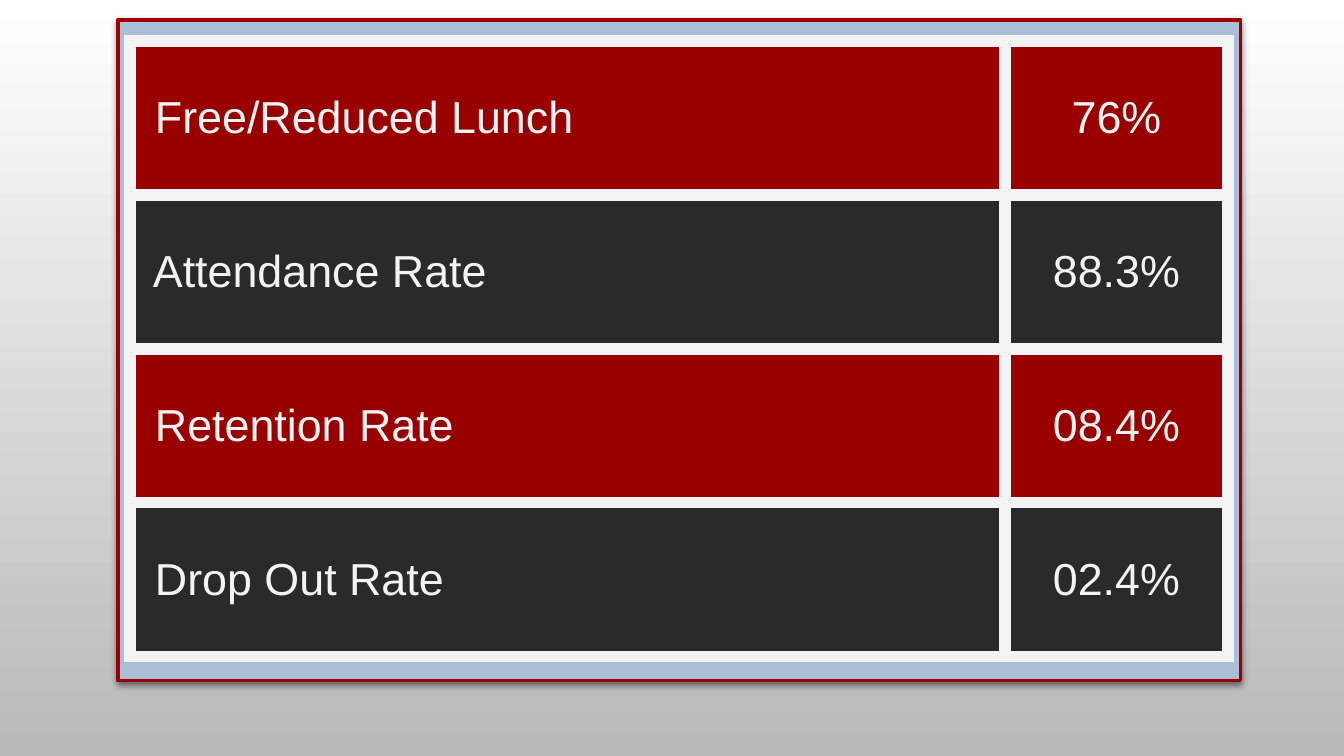
from dataclasses import dataclass

from lxml.etree import SubElement
from pptx import Presentation
from pptx.dml.color import RGBColor
from pptx.enum.shapes import MSO_SHAPE
from pptx.enum.text import MSO_ANCHOR, PP_ALIGN
from pptx.oxml.ns import qn
from pptx.slide import Slide
from pptx.table import Table, _Cell
from pptx.util import Emu, Pt

RED = RGBColor(0x99, 0x00, 0x00)
DARK = RGBColor(0x2A, 0x2A, 0x2A)
LIGHT = RGBColor(0xF3, 0xF3, 0xF3)
BLUE = RGBColor(0xAA, 0xBE, 0xD7)
WHITE = RGBColor(0xFF, 0xFF, 0xFF)
GRAY = RGBColor(0xB9, 0xB9, 0xB9)
BLACK = RGBColor(0x00, 0x00, 0x00)

PAD = 13
WIDTHS = (875, 223)
HEIGHT = 154


@dataclass(frozen=True)
class Rate:
    label: str
    value: str
    fill: RGBColor
    indent: int = 25


RATES = (
    Rate("Free/Reduced Lunch", "76%", RED),
    Rate("Attendance Rate", "88.3%", DARK, indent=23),
    Rate("Retention Rate", "08.4%", RED),
    Rate("Drop Out Rate", "02.4%", DARK),
)


def px(count: int) -> Emu:
    return Emu(round(count * 914400 / 100.8))


def paint(slide: Slide) -> None:
    fill = slide.background.fill
    fill.gradient()
    fill.gradient_angle = 270
    for stop, color in zip(fill.gradient_stops, (WHITE, GRAY)):
        stop.color.rgb = color


def frame(slide: Slide) -> None:
    box = slide.shapes.add_shape(
        MSO_SHAPE.RECTANGLE, px(118), px(20), px(1123), px(661))
    box.fill.solid()
    box.fill.fore_color.rgb = BLUE
    box.line.color.rgb = RED
    box.line.width = Pt(2.25)
    box.shadow.inherit = False
    effects = box._element.spPr.find(qn("a:effectLst"))
    shadow = SubElement(
        effects, qn("a:outerShdw"), blurRad=str(Pt(4.5)), dist=str(Pt(1.5)),
        dir="5400000", algn="ctr", rotWithShape="0")
    color = SubElement(shadow, qn("a:srgbClr"), val=str(BLACK))
    SubElement(color, qn("a:alpha"), val="50000")


def border(cell: _Cell, color: RGBColor, width: Emu) -> None:
    props = cell._tc.get_or_add_tcPr()
    for side in ("lnL", "lnR", "lnT", "lnB"):
        line = SubElement(props, qn(f"a:{side}"), w=str(width), cmpd="sng")
        fill = SubElement(line, qn("a:solidFill"))
        SubElement(fill, qn("a:srgbClr"), val=str(color))
        SubElement(line, qn("a:prstDash"), val="solid")


def write(cell: _Cell, text: str, *, fill: RGBColor, left: int = PAD,
          align: PP_ALIGN = PP_ALIGN.LEFT) -> None:
    border(cell, LIGHT, Pt(9))
    cell.fill.solid()
    cell.fill.fore_color.rgb = fill
    cell.vertical_anchor = MSO_ANCHOR.MIDDLE
    cell.margin_left = px(left)
    cell.margin_right = cell.margin_top = cell.margin_bottom = px(PAD)
    para = cell.text_frame.paragraphs[0]
    para.alignment = align
    run = para.add_run()
    run.text = text
    run.font.name = "Arial"
    run.font.size = Pt(32)
    run.font.color.rgb = LIGHT


def grid(slide: Slide) -> Table:
    table = slide.shapes.add_table(
        len(RATES), len(WIDTHS), px(130), px(41),
        px(sum(WIDTHS)), px(HEIGHT * len(RATES))).table
    table.first_row = False
    table.horz_banding = False
    for column, width in zip(table.columns, WIDTHS):
        column.width = px(width)
    for row, rate in zip(table.rows, RATES):
        row.height = px(HEIGHT)
        label, value = row.cells
        write(label, rate.label, fill=rate.fill, left=rate.indent)
        write(value, rate.value, fill=rate.fill, align=PP_ALIGN.CENTER)
    return table


def main() -> None:
    deck = Presentation()
    deck.slide_width, deck.slide_height = px(1344), px(756)
    slide = deck.slides.add_slide(deck.slide_layouts[6])
    paint(slide)
    frame(slide)
    grid(slide)
    deck.save("out.pptx")


if __name__ == "__main__":
    main()
